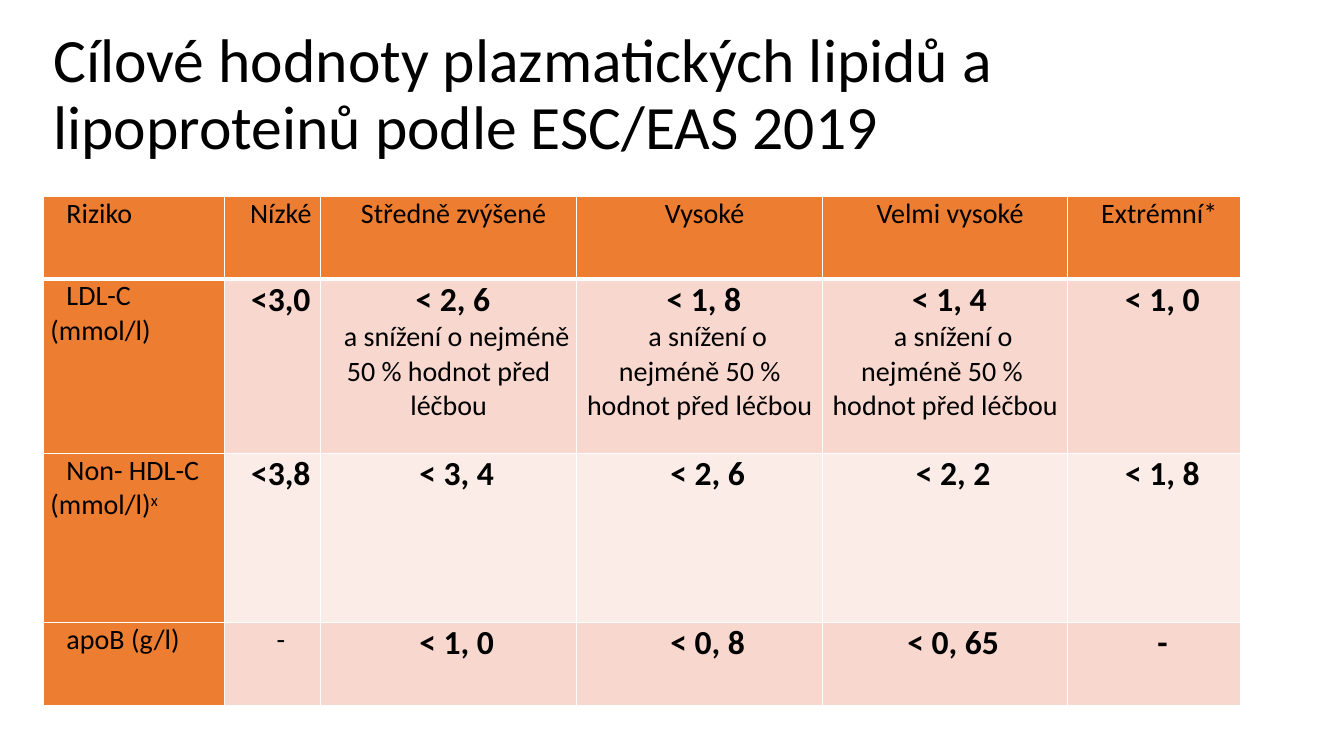
import pptx
import pptx.dml.color
import pptx.enum.text
import pptx.oxml.ns
import pptx.util
from lxml import etree

Inches = pptx.util.Inches
Pt = pptx.util.Pt
ALIGN = pptx.enum.text.PP_ALIGN
ANCHOR = pptx.enum.text.MSO_ANCHOR

FONT = "Calibri"
BLACK, WHITE, ORANGE = "000000", "FFFFFF", "ED7D31"
BANDS = ["F8D7CE", "FCECE8"]
COLUMN_WIDTHS = [1.8, 0.95, 2.54, 2.44, 2.43, 1.72]
ROW_HEIGHTS = [0.82, 1.73, 1.68, 0.82]

# Text sizes and weights: (points, bold, superscript)
PLAIN, VALUE, RAISED = (20, False, False), (24, True, False), (20, False, True)

REDUCTION = "a snížení o nejméně 50 % hodnot před léčbou"
REDUCTION_WIDE = "a snížení o nejméně 50 %  hodnot před léčbou"


def color(value):
    return pptx.dml.color.RGBColor.from_string(value)


def plain(text):
    return [[(text, PLAIN)]]


def value(text, note=None):
    """A bold target value, with an optional plain paragraph below it."""
    return [[(text, VALUE)]] + (plain(note) if note else [])


# Each cell is a list of paragraphs, each paragraph a list of runs
TARGETS = [
    [plain(text) for text in ("Riziko", "Nízké ", "Středně zvýšené ", "Vysoké ",
                              "Velmi vysoké ", "Extrémní* ")],
    [plain("LDL-C (mmol/l)"), value("<3,0"), value("< 2, 6 ", REDUCTION),
     value("< 1, 8 ", REDUCTION), value("< 1, 4 ", REDUCTION_WIDE), value("< 1, 0")],
    [[[("Non- HDL-C (mmol/l)", PLAIN), ("x", RAISED)]]]
    + [value(text) for text in ("<3,8", "< 3, 4", "< 2, 6", "< 2, 2", "< 1, 8")],
    [plain("apoB (g/l)"), plain("-")]
    + [value(text) for text in ("< 1, 0", "< 0, 8", "< 0, 65", "-")],
]


def add_run(paragraph, text, size, bold=False, superscript=False):
    run = paragraph.add_run()
    run.text = text
    run.font.name = FONT
    run.font.size = Pt(size)
    run.font.bold = bold
    run.font.color.rgb = color(BLACK)
    if superscript:
        run._r.get_or_add_rPr().set("baseline", "30000")


def add_border(cell, side, width):
    qn = pptx.oxml.ns.qn
    line = etree.SubElement(cell._tc.get_or_add_tcPr(), qn("a:ln" + side), w=str(Pt(width)))
    fill = etree.SubElement(line, qn("a:solidFill"))
    etree.SubElement(fill, qn("a:srgbClr"), val=WHITE)


def fill_title(slide, left, top, width, height):
    title = slide.shapes.title
    title.left, title.top = Inches(left), Inches(top)
    title.width, title.height = Inches(width), Inches(height)
    frame = title.text_frame
    frame.word_wrap = True
    frame.auto_size = pptx.enum.text.MSO_AUTO_SIZE.NONE
    frame.vertical_anchor = ANCHOR.MIDDLE
    paragraph = frame.paragraphs[0]
    paragraph.alignment = ALIGN.LEFT
    paragraph.line_spacing = 0.9
    add_run(paragraph, "Cílové hodnoty plazmatických lipidů a lipoproteinů podle ESC/EAS 2019", 44)


def fill_cell(cell, paragraphs, row, column):
    cell.margin_left = cell.margin_right = Inches(0.07)
    cell.margin_top = cell.margin_bottom = 0
    cell.vertical_anchor = ANCHOR.TOP
    # Borders go before the fill; a thicker rule closes the header row
    for side in "LRTB":
        add_border(cell, side, 3 if (row, side) in ((0, "B"), (1, "T")) else 1)
    is_heading = row == 0 or column == 0
    cell.fill.solid()
    cell.fill.fore_color.rgb = color(ORANGE if is_heading else BANDS[(row - 1) % 2])
    for index, runs in enumerate(paragraphs):
        frame = cell.text_frame
        paragraph = frame.add_paragraph() if index else frame.paragraphs[0]
        paragraph.alignment = ALIGN.CENTER if column else ALIGN.LEFT
        properties = paragraph._p.get_or_add_pPr()
        properties.set("marL", "0")
        properties.set("indent", str(Inches(0.16)))
        for text, style in runs:
            add_run(paragraph, text, *style)


def add_target_table(slide, left, top):
    table = slide.shapes.add_table(
        len(ROW_HEIGHTS), len(COLUMN_WIDTHS), Inches(left), Inches(top),
        Inches(sum(COLUMN_WIDTHS)), Inches(sum(ROW_HEIGHTS))).table
    table.first_col = True
    for column, width in zip(table.columns, COLUMN_WIDTHS):
        column.width = Inches(width)
    for row, height in zip(table.rows, ROW_HEIGHTS):
        row.height = Inches(height)
    for row, cells in enumerate(TARGETS):
        for column, paragraphs in enumerate(cells):
            fill_cell(table.cell(row, column), paragraphs, row, column)


def main():
    presentation = pptx.Presentation()
    presentation.slide_width = Inches(13.33)
    presentation.slide_height = Inches(7.5)
    slide = presentation.slides.add_slide(presentation.slide_layouts.get_by_name("Title Only"))
    fill_title(slide, 0.43, 0.23, 11.5, 1.45)
    add_target_table(slide, 0.43, 1.95)
    presentation.save("out.pptx")


if __name__ == "__main__":
    main()
